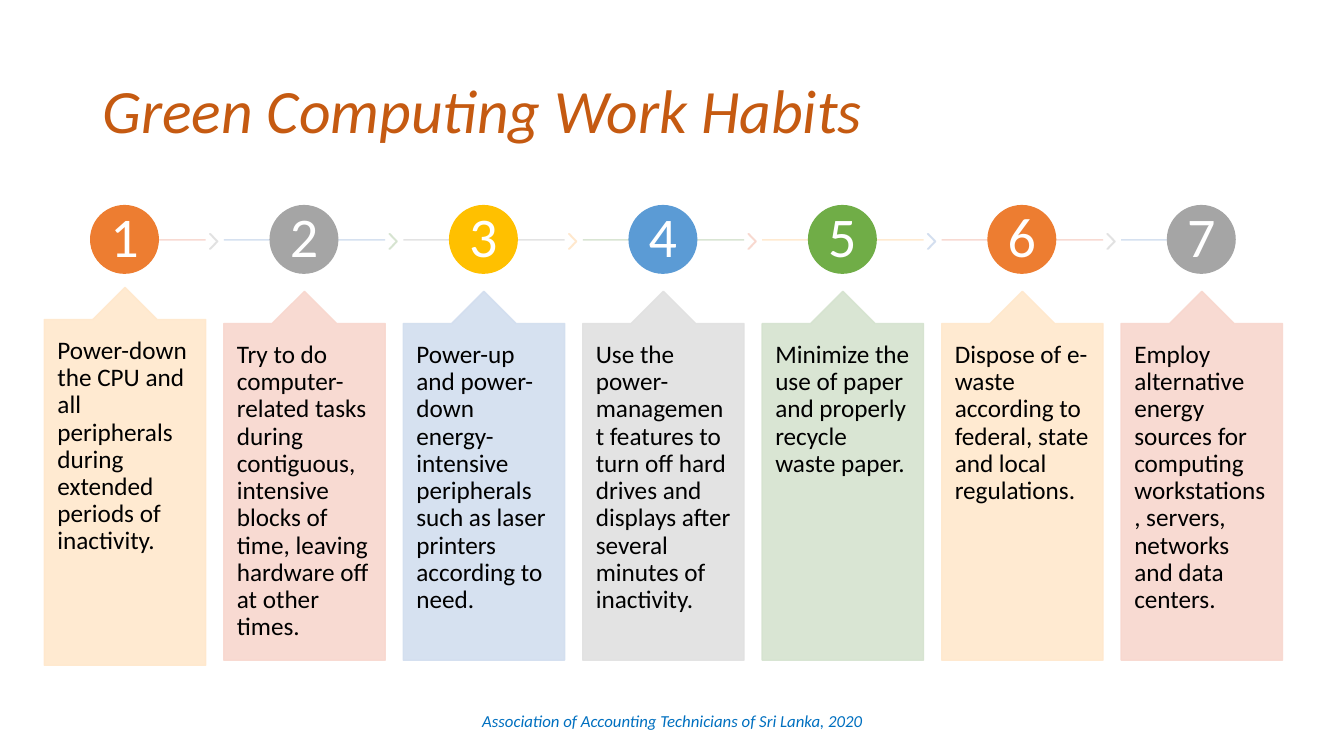
"""Build the Green Computing Work Habits slide: seven numbered steps with callout cards."""
from lxml import etree
from pptx import Presentation
from pptx.dml.color import RGBColor
from pptx.enum.shapes import MSO_CONNECTOR, MSO_SHAPE as SHAPE
from pptx.enum.text import MSO_ANCHOR as ANCHOR, PP_ALIGN as ALIGN
from pptx.oxml.ns import qn
from pptx.util import Pt

ORANGE = RGBColor(0xED, 0x7D, 0x31)
GRAY = RGBColor(0xA5, 0xA5, 0xA5)
GOLD = RGBColor(0xFF, 0xC0, 0x00)
BLUE = RGBColor(0x5B, 0x9B, 0xD5)
GREEN = RGBColor(0x70, 0xAD, 0x47)
PEACH = RGBColor(0xFF, 0xE8, 0xCC)
PINK = RGBColor(0xF8, 0xD7, 0xCE)
PALE_BLUE = RGBColor(0xD2, 0xDE, 0xEF)
PALE_GRAY = RGBColor(0xE1, 0xE1, 0xE1)
PALE_GREEN = RGBColor(0xD5, 0xE3, 0xCF)
TITLE_COLOR = RGBColor(0xC5, 0x5A, 0x11)
FOOTER_COLOR = RGBColor(0x00, 0x70, 0xC0)
WHITE = RGBColor(0xFF, 0xFF, 0xFF)
BLACK = RGBColor(0x00, 0x00, 0x00)

TITLE = "Green Computing Work Habits"
FOOTER = "Association of Accounting Technicians of Sri Lanka, 2020"
HABITS = [
    (ORANGE, "Power-down the CPU and all peripherals during extended periods of inactivity."),
    (GRAY, "Try to do computer-related tasks during contiguous, intensive blocks of time, "
           "leaving hardware off at other times."),
    (GOLD, "Power-up and power-down energy-intensive peripherals such as laser printers "
           "according to need."),
    (BLUE, "Use the power-management features to turn off hard drives and displays after "
           "several minutes of inactivity."),
    (GREEN, "Minimize the use of paper and properly recycle waste paper."),
    (ORANGE, "Dispose of e-waste according to federal, state and local regulations."),
    (GRAY, "Employ alternative energy sources for computing workstations, servers, "
           "networks and data centers."),
]
TINTS = [PEACH, PINK, PALE_BLUE, PALE_GRAY, PALE_GREEN]

PX = 9144
LEFT, PITCH, CARD_W = 44, 178, 160
LINK_Y, TIP_H, CIRCLE = 238, 32, 67


def px(*lengths):
    return [n * PX for n in lengths]


def set_text(sp, text, size, color, margins=(10, 5), anchor=ANCHOR.MIDDLE,
             align=ALIGN.LEFT, italic=False, spacing=0.9):
    tf = sp.text_frame
    tf.word_wrap = True
    tf.vertical_anchor = anchor
    tf.margin_left = tf.margin_right = margins[0] * PX
    tf.margin_top = tf.margin_bottom = margins[1] * PX
    p = tf.paragraphs[0]
    p.text = text
    p.alignment = align
    p.line_spacing = spacing
    p.font.name = "Calibri"
    p.font.size = Pt(size)
    p.font.italic = italic
    p.font.color.rgb = color


def make_translucent(sp):
    for clr in sp._element.spPr.iter(qn("a:srgbClr")):
        etree.SubElement(clr, qn("a:alpha"), val="90000")


def add_shape(s, kind, box, color, adjustments=(), translucent=True):
    sp = s.shapes.add_shape(kind, *px(*box))
    sp.shadow.inherit = False
    for i, value in enumerate(adjustments):
        sp.adjustments[i] = value
    sp.fill.solid()
    sp.fill.fore_color.rgb = color
    sp.line.color.rgb = color
    sp.line.width = Pt(1)
    if translucent:
        make_translucent(sp)
    return sp


def add_link(s, x1, x2, color):
    link = s.shapes.add_connector(MSO_CONNECTOR.STRAIGHT, *px(x1, LINK_Y, x2, LINK_Y))
    link.line.color.rgb = color
    link.line.width = Pt(1)
    make_translucent(link)
    etree.SubElement(link._element.spPr, qn("a:effectLst"))


def add_habit(s, i, color, text):
    x = LEFT + i * PITCH
    first, last = i == 0, i == len(HABITS) - 1
    tint = TINTS[i % len(TINTS)]
    add_link(s, x + (89 if first else 0), x + (80 if last else CARD_W),
             TINTS[(i + 1) % len(TINTS)])
    if not last:
        add_shape(s, SHAPE.CHEVRON, (x + 164, 232, 8, 15),
                  TINTS[(i + 3) % len(TINTS)], [0.9])
    circle = add_shape(s, SHAPE.OVAL, (x + 46, 204, CIRCLE, CIRCLE), color, translucent=False)
    set_text(circle, str(i + 1), 40, WHITE, (3, 3), align=ALIGN.CENTER)

    top, height = (285, 375) if first else (289, 366)
    add_shape(s, SHAPE.UP_ARROW_CALLOUT, (x, top, CARD_W, height), tint, [0.5, 0.2, 0.2, 1])
    box = s.shapes.add_textbox(*px(x, top + TIP_H, CARD_W, height - TIP_H))
    set_text(box, text, 18, BLACK, (13, 18), ANCHOR.TOP)


def main():
    prs = Presentation()
    prs.slide_width, prs.slide_height = px(1333, 750)
    s = prs.slides.add_slide(prs.slide_layouts[6])
    title = s.shapes.add_textbox(*px(92, 40, 1150, 145))
    set_text(title, TITLE, 44, TITLE_COLOR, italic=True)
    footer = s.shapes.add_textbox(*px(442, 695, 450, 40))
    set_text(footer, FOOTER, 12, FOOTER_COLOR, align=ALIGN.CENTER, italic=True, spacing=1.0)
    for i, (color, text) in enumerate(HABITS):
        add_habit(s, i, color, text)
    prs.save("out.pptx")


if __name__ == "__main__":
    main()
